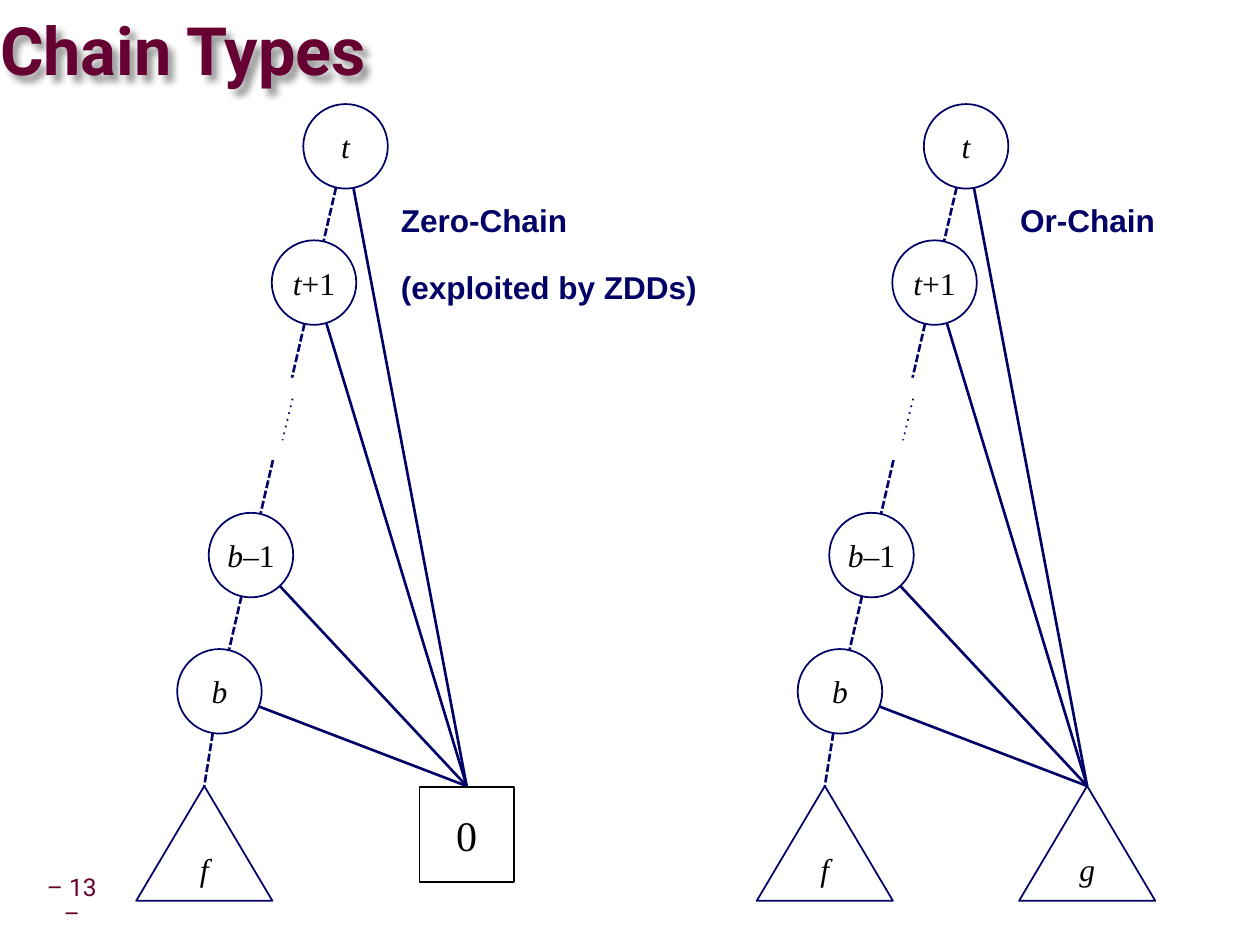
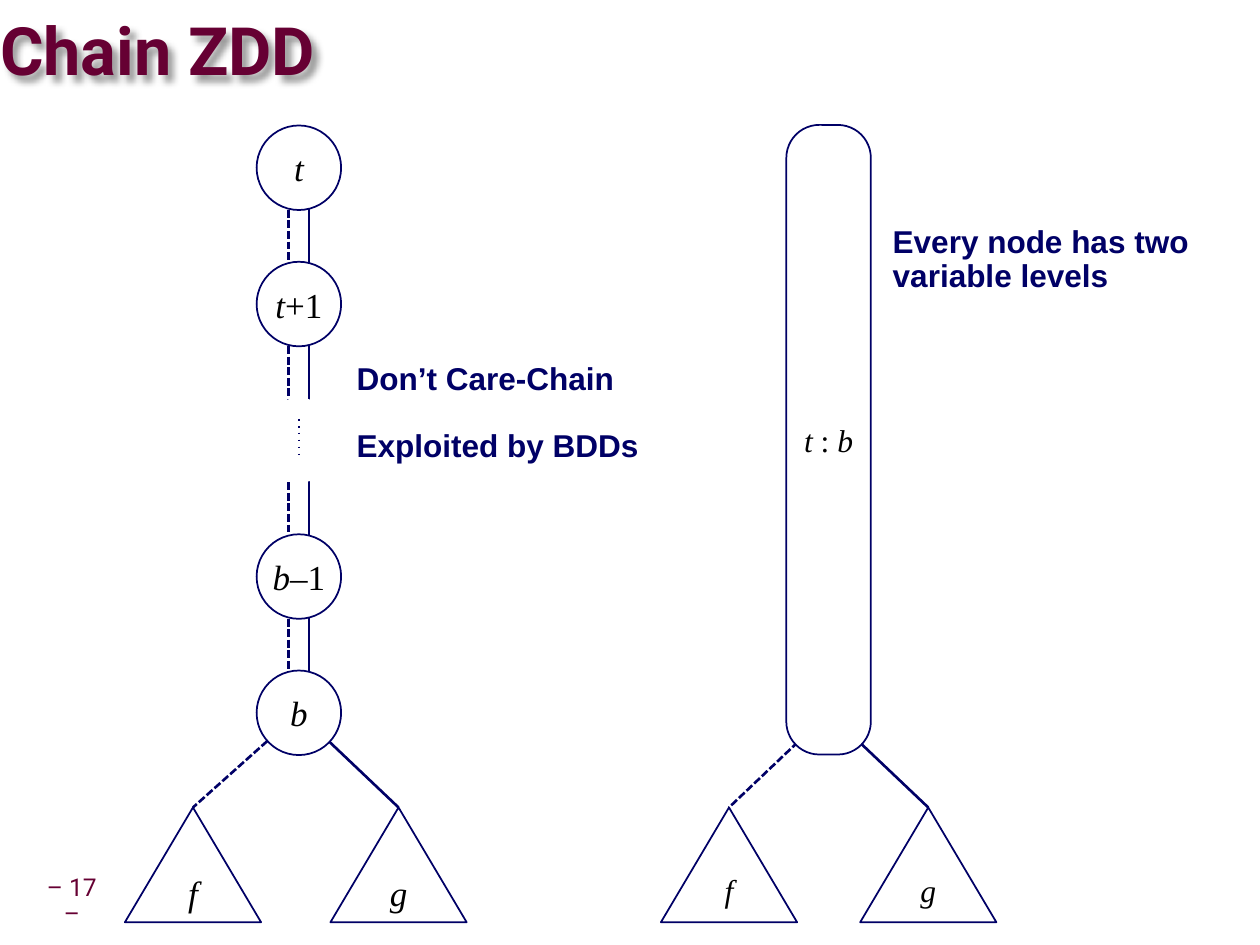
from dataclasses import dataclass

from lxml import etree
from pptx import Presentation
from pptx.dml.color import RGBColor
from pptx.enum.shapes import MSO_CONNECTOR, MSO_SHAPE
from pptx.enum.text import MSO_ANCHOR, MSO_AUTO_SIZE, PP_ALIGN
from pptx.oxml.ns import qn
from pptx.util import Inches, Pt

ELLIPSE = MSO_SHAPE.OVAL
TRIANGLE = MSO_SHAPE.ISOSCELES_TRIANGLE
SQUARE = MSO_SHAPE.RECTANGLE
PILL = MSO_SHAPE.ROUNDED_RECTANGLE
STRAIGHT = MSO_CONNECTOR.STRAIGHT
TOP, MIDDLE = MSO_ANCHOR.TOP, MSO_ANCHOR.MIDDLE
LEFT, CENTER = PP_ALIGN.LEFT, PP_ALIGN.CENTER
NO_AUTOFIT = MSO_AUTO_SIZE.NONE


@dataclass(frozen=True)
class Theme:
    maroon: RGBColor = RGBColor(0x66, 0x00, 0x33)
    navy: RGBColor = RGBColor(0x00, 0x00, 0x66)
    black: RGBColor = RGBColor(0x00, 0x00, 0x00)
    white: RGBColor = RGBColor(0xFF, 0xFF, 0xFF)
    heading_font: str = "Roboto"
    label_font: str = "Arial"
    math_font: str = "Times New Roman"
    title_size: int = 38
    terminal_size: int = 24
    large_math_size: int = 20
    body_size: int = 18
    page_size: int = 14
    outline: float = 1
    edge: float = 1.5


THEME = Theme()

NODE_SIZE = 0.67
LEVEL_STEP = 1.08
LEAF_WIDTH, LEAF_HEIGHT = 1.08, 0.91

# One entry per level, as (text, italic) runs; None is the gap in the chain.
CHAIN = [
    [("t", True)],
    [("t", True), ("+1", False)],
    None,
    [("b", True), ("–1", False)],
    [("b", True)],
]
GAP = CHAIN.index(None)
F_LEAF = [("f", True)]
G_LEAF = [("g", True)]


def add_run(paragraph, text, font, size, color, bold=False, italic=False):
    run = paragraph.add_run()
    run.text = text
    run.font.name = font
    run.font.size = Pt(size)
    run.font.color.rgb = color
    run.font.bold = bold
    run.font.italic = italic


def set_frame(frame, anchor, side=0.0, vertical=0.05, wrap=True):
    frame.auto_size = NO_AUTOFIT
    frame.word_wrap = wrap
    frame.vertical_anchor = anchor
    frame.margin_left = frame.margin_right = Inches(side)
    frame.margin_top = frame.margin_bottom = Inches(vertical)


def add_title_shadow(title):
    effects = etree.SubElement(title.element.spPr, qn("a:effectLst"))
    shadow = etree.SubElement(
        effects, qn("a:outerShdw"), blurRad=str(Inches(0.05)),
        dist=str(Inches(0.05)), dir="2700000", algn="tl", rotWithShape="0")
    tint = etree.SubElement(shadow, qn("a:srgbClr"), val="000000")
    etree.SubElement(tint, qn("a:alpha"), val="40000")


def add_page_number(slide, number):
    box = slide.shapes.add_textbox(
        Inches(0.24), Inches(6.99), Inches(0.66), Inches(0.31))
    set_frame(box.text_frame, MIDDLE, side=0.08)
    paragraph = box.text_frame.paragraphs[0]
    paragraph.alignment = CENTER
    paragraph.line_spacing = 0.9
    add_run(paragraph, f"– {number} –", THEME.heading_font, THEME.page_size,
            THEME.maroon)


def new_slide(prs, heading, number):
    slide = prs.slides.add_slide(prs.slide_layouts[5])
    title = slide.shapes.title
    title.left, title.top = Inches(0), Inches(0.01)
    title.width, title.height = Inches(9.52), Inches(0.85)
    title.fill.background()
    add_title_shadow(title)
    set_frame(title.text_frame, MIDDLE, vertical=0)
    paragraph = title.text_frame.paragraphs[0]
    paragraph.alignment = LEFT
    paragraph.line_spacing = 0.87
    add_run(paragraph, heading, THEME.heading_font, THEME.title_size,
            THEME.maroon, bold=True)
    add_page_number(slide, number)
    return slide


def add_label(slide, left, top, width, *lines):
    """Bold caption whose lines stand one line apart."""
    box = slide.shapes.add_textbox(
        Inches(left), Inches(top), Inches(width), Inches(0.92))
    frame = box.text_frame
    set_frame(frame, TOP, side=0.1)
    for index, line in enumerate(lines):
        paragraph = frame.add_paragraph() if index else frame.paragraphs[0]
        paragraph.line_spacing = 0.9
        if index:
            paragraph.space_before = Pt(18.6)
        add_run(paragraph, line, THEME.label_font, THEME.body_size,
                THEME.navy, bold=True)


def add_edge(slide, start, end, dash=None, width=THEME.edge):
    edge = slide.shapes.add_connector(
        STRAIGHT, *(Inches(value) for value in (*start, *end)))
    edge.line.color.rgb = THEME.navy
    edge.line.width = Pt(width)
    properties = edge.element.spPr
    if dash:
        outline = properties.find(qn("a:ln"))
        etree.SubElement(outline, qn("a:prstDash"), val=dash)
    etree.SubElement(properties, qn("a:effectLst"))


def add_block(slide, kind, left, top, width, height, runs,
              size=THEME.body_size, anchor=MIDDLE, line=THEME.navy, wrap=True):
    """White shape with math text; without runs it has no outline."""
    block = slide.shapes.add_shape(
        kind, *(Inches(value) for value in (left, top, width, height)))
    block.shadow.inherit = False
    block.fill.solid()
    block.fill.fore_color.rgb = THEME.white
    if not runs:
        block.line.fill.background()
        return block
    block.line.color.rgb = line
    block.line.width = Pt(THEME.outline)
    set_frame(block.text_frame, anchor, wrap=wrap)
    paragraph = block.text_frame.paragraphs[0]
    paragraph.alignment = CENTER
    for text, italic in runs:
        add_run(paragraph, text, THEME.math_font, size, THEME.black,
                italic=italic)
    return block


def add_leaf(slide, apex, runs, size=THEME.body_size):
    x, y = apex
    add_block(slide, TRIANGLE, x - LEAF_WIDTH / 2, y, LEAF_WIDTH, LEAF_HEIGHT,
              runs, size, anchor=TOP)


def chain_centers(x, y, drift=0.0):
    return [(x + drift * level, y + LEVEL_STEP * level)
            for level in range(len(CHAIN))]


def add_nodes(slide, centers, size=THEME.body_size):
    for (x, y), runs in zip(centers, CHAIN):
        add_block(slide, ELLIPSE, x - NODE_SIZE / 2, y - NODE_SIZE / 2,
                  NODE_SIZE, NODE_SIZE, runs, size)


def add_ellipsis(slide, start, end):
    add_edge(slide, start, end, "dot", THEME.outline)


def add_fan_chain(slide, x):
    """Slanted chain whose solid edges meet in one point, which is returned."""
    centers = chain_centers(x, 1.16, drift=-0.25)
    leaf, hub = (x - 1.12, 6.23), (x + 0.96, 6.23)
    for start, end in zip(centers, centers[1:] + [leaf]):
        add_edge(slide, start, end, "sysDash")
    for center, runs in zip(centers, CHAIN):
        if runs:
            add_edge(slide, center, hub)
    add_nodes(slide, centers)
    gap_x, gap_y = centers[GAP]
    add_ellipsis(slide, (gap_x + 0.08, gap_y - 0.16), (gap_x, gap_y + 0.17))
    add_leaf(slide, leaf, F_LEAF)
    return hub


def add_branches(slide, root, f_apex, g_apex, size=THEME.body_size):
    add_edge(slide, root, f_apex, "sysDash")
    add_edge(slide, root, g_apex)
    add_leaf(slide, f_apex, F_LEAF, size)
    add_leaf(slide, g_apex, G_LEAF, size)


def add_rail_chain(slide, x):
    """Upright chain with a dashed and a solid edge between levels."""
    centers = chain_centers(x, 1.33)
    for (_, upper), (_, lower) in zip(centers, centers[1:]):
        add_edge(slide, (x - 0.08, upper), (x - 0.08, lower), "sysDash")
        add_edge(slide, (x + 0.08, upper), (x + 0.08, lower))
    add_branches(slide, centers[-1], (1.53, 6.4), (3.16, 6.4),
                 THEME.large_math_size)
    add_nodes(slide, centers, THEME.large_math_size)
    gap_y = centers[GAP][1]
    add_ellipsis(slide, (x, gap_y - 0.17), (x, gap_y + 0.16))


def add_merged_node(slide, x):
    add_branches(slide, (x, 5.65), (x - 0.79, 6.4), (x + 0.79, 6.4))
    pill = add_block(slide, PILL, x - NODE_SIZE / 2, 0.99, NODE_SIZE, 4.99,
                     [("t ", True), (": ", False), ("b", True)], wrap=False)
    pill.adjustments[0] = 0.39


def build_chain_types(prs):
    slide = new_slide(prs, "Chain Types", 13)
    zero_x, zero_y = add_fan_chain(slide, 2.74)
    side = 0.75
    add_block(slide, SQUARE, zero_x - side / 2, zero_y + 0.01, side, side,
              [("0", False)], THEME.terminal_size, line=THEME.black)
    add_label(slide, 3.08, 1.58, 2.8, "Zero-Chain", "(exploited by ZDDs)")
    add_leaf(slide, add_fan_chain(slide, 7.66), G_LEAF)
    add_label(slide, 7.99, 1.58, 1.6, "Or-Chain")


def build_chain_zdd(prs):
    slide = new_slide(prs, "Chain ZDD", 17)
    add_rail_chain(slide, 2.37)
    add_label(slide, 2.73, 2.83, 2.8, "Don’t Care-Chain", "Exploited by BDDs")
    add_merged_node(slide, 6.57)
    add_label(slide, 6.98, 1.74, 2.93, "Every node has two variable levels")


def main():
    prs = Presentation()
    prs.slide_width, prs.slide_height = Inches(9.99), Inches(7.49)
    build_chain_types(prs)
    build_chain_zdd(prs)
    prs.save("out.pptx")


if __name__ == "__main__":
    main()
